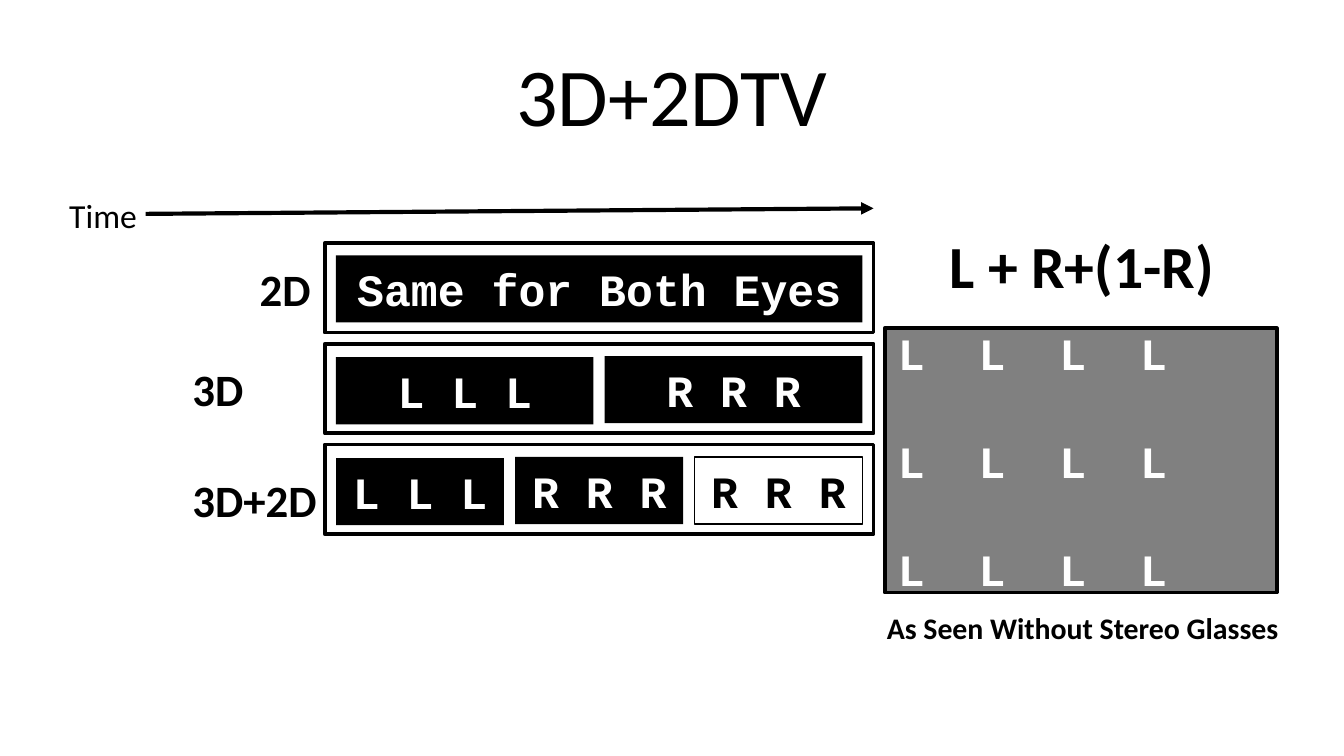
from lxml import etree
from pptx import Presentation
from pptx.dml.color import RGBColor
from pptx.enum.shapes import MSO_CONNECTOR as Conn, MSO_SHAPE as Shape
from pptx.enum.text import MSO_ANCHOR as Anchor, PP_ALIGN as Align
from pptx.oxml.ns import qn
from pptx.util import Emu, Pt

SCALE = 7620  # EMU per px, 120 px to the inch
COLORS = {"black": "000000", "white": "FFFFFF", "gray": "808080"}
SANS, MONO = "Calibri", "Courier New"

FRAME = (290, 490, 80)  # left, width, height
TOP, STEP = 217, 90
PAD, GAP, BLOCK = 10, 10, 60

# Each row: blocks of text, fill, font colour and drop below the frame's top
ROWS = [
    [("Same for Both Eyes", "black", "white", 11)],
    [("L L L", "black", "white", 12), ("R R R", "black", "white", 11)],
    [("L L L", "black", "white", 12), ("R R R", "black", "white", 11),
     ("R R R", "white", "black", 11)],
]
# Text, box, size, bold, alignment
LABELS = [
    ("Time", (50, 168, 85, 48), 18, False, Align.LEFT),
    ("2D", (220, 228, 70, 60), 24, True, Align.LEFT),
    ("3D", (160, 317, 110, 60), 24, True, Align.LEFT),
    ("3D+2D", (160, 416, 150, 60), 24, True, Align.LEFT),
    ("L + R+(1-R)", (792, 198, 348, 77), 32, True, Align.CENTER),
]


def px(*nums):
    return [Emu(round(n * SCALE)) for n in nums]


def rgb(name):
    return RGBColor.from_string(COLORS[name])


def write(shape, lines, size, face=SANS, color="black", bold=False,
          align=Align.LEFT, anchor=Anchor.TOP, wrap=True, gap=0):
    """Fill a shape with paragraphs, gap points apart."""
    frame = shape.text_frame
    frame.word_wrap = wrap
    frame.vertical_anchor = anchor
    frame.text = "\n".join(lines)
    for i, para in enumerate(frame.paragraphs):
        para.alignment = align
        para.space_before = Pt(gap if i else 0)
        font = para.font
        font.name, font.size, font.bold = face, Pt(size), bold
        font.color.rgb = rgb(color)


def label(slide, text, box, size, bold=False, align=Align.LEFT, **style):
    shape = slide.shapes.add_textbox(*px(*box))
    write(shape, [text], size, bold=bold, align=align, **style)


def rect(slide, box, fill=None, line=0):
    """Add a rectangle; line is the outline width in points."""
    shape = slide.shapes.add_shape(Shape.RECTANGLE, *px(*box))
    shape.shadow.inherit = False
    if fill:
        shape.fill.solid()
        shape.fill.fore_color.rgb = rgb(fill)
    else:
        shape.fill.background()
    if line:
        shape.line.width = Pt(line)
        shape.line.color.rgb = rgb("black")
    else:
        shape.line.fill.background()
    return shape


def arrow(slide, start, end):
    link = slide.shapes.add_connector(Conn.STRAIGHT, *px(*start, *end))
    link.line.width = Pt(2.25)
    link.line.color.rgb = rgb("black")
    etree.SubElement(link.line._get_or_add_ln(), qn("a:tailEnd"), type="triangle")
    etree.SubElement(link._element.spPr, qn("a:effectLst"))


def row(slide, top, blocks):
    """Draw a time frame split into equal blocks."""
    left, width, height = FRAME
    rect(slide, (left, top, width, height), line=2)
    count = len(blocks)
    wide = (width - 2 * PAD - GAP * (count - 1)) / count
    for i, (text, fill, color, drop) in enumerate(blocks):
        x = left + PAD + i * (wide + GAP)
        line = 0.75 if fill == "white" else 0
        shape = rect(slide, (x, top + drop, wide, BLOCK), fill, line)
        write(shape, [text], 24, MONO, color, True, Align.CENTER)


def view(slide):
    """Draw the screen as seen without glasses, with its caption."""
    screen = rect(slide, (790, 293, 350, 236), "gray", 2)
    write(screen, ["L  L  L  L"] * 3, 24, MONO, "white", True,
          anchor=Anchor.MIDDLE, gap=29)
    label(slide, "As Seen Without Stereo Glasses", (780, 538, 378, 44), 16,
          True, wrap=False)


def main():
    deck = Presentation()
    deck.slide_width, deck.slide_height = px(1200, 675)
    slide = deck.slides.add_slide(deck.slide_layouts[6])
    label(slide, "3D+2DTV", (60, 27, 1080, 113), 44, align=Align.CENTER,
          anchor=Anchor.MIDDLE)
    view(slide)
    for i, blocks in enumerate(ROWS):
        row(slide, TOP + i * STEP, blocks)
    for item in LABELS:
        label(slide, *item)
    arrow(slide, (130, 191), (780, 186))
    deck.save("out.pptx")


if __name__ == "__main__":
    main()
